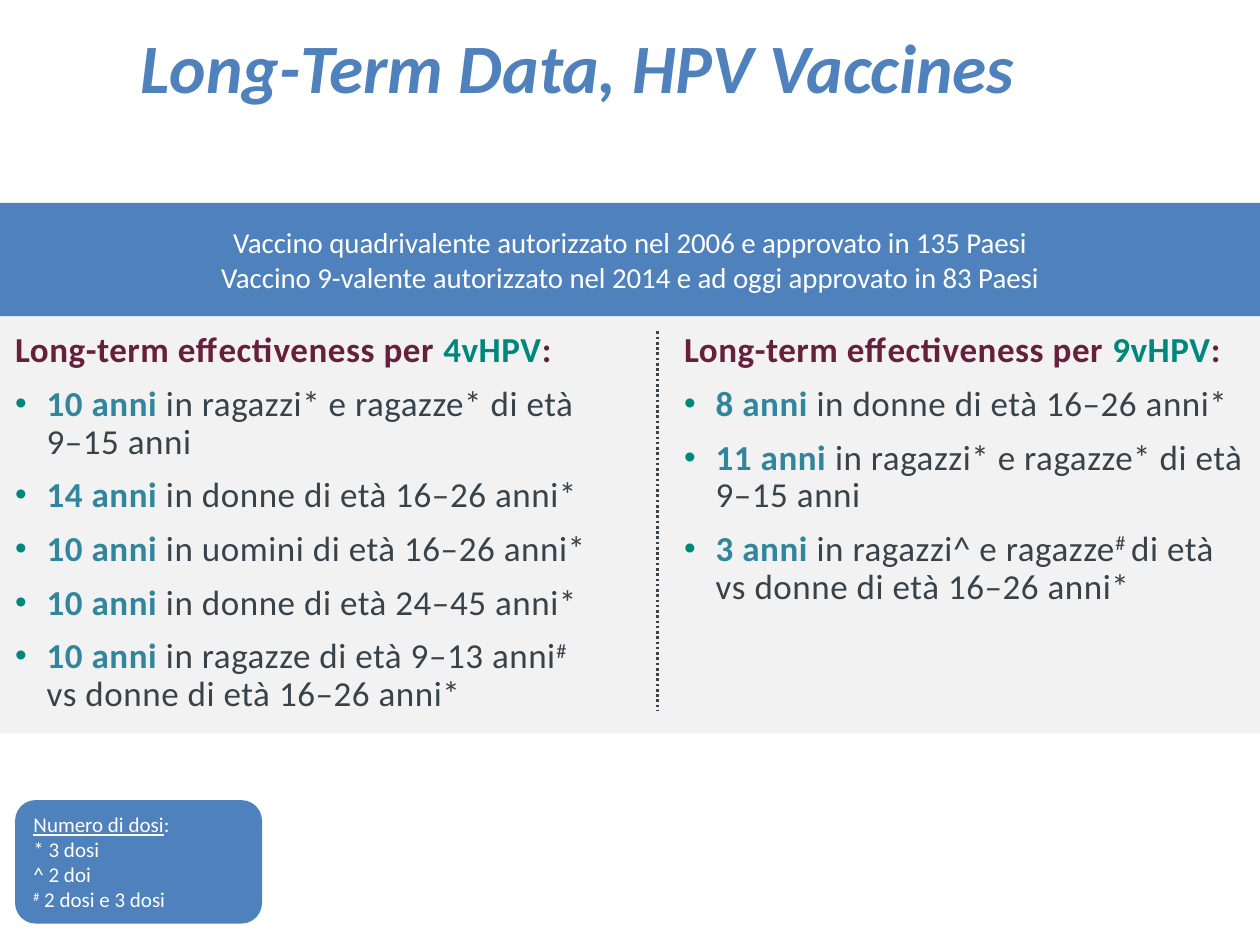
from lxml import etree
from pptx import Presentation
from pptx.dml.color import RGBColor
from pptx.enum.dml import MSO_LINE
from pptx.enum.shapes import MSO_CONNECTOR, MSO_SHAPE
from pptx.enum.text import MSO_ANCHOR, PP_ALIGN
from pptx.oxml.ns import qn
from pptx.util import Inches, Pt

COLORS = {
    "blue": "4F81BD", "panel": "F2F2F2", "plum": "66203A", "green": "00877C",
    "teal": "31859C", "slate": "37424A", "white": "FFFFFF",
}


def add_run(p, text, size, color, bold=False, spacing=0, raised=False):
    r = p.add_run()
    r.text = text
    r.font.name = "Calibri"
    r.font.size = Pt(size)
    r.font.bold = bold
    r.font.color.rgb = RGBColor.from_string(COLORS[color])
    rPr = r.font._element
    if spacing:
        rPr.set("spc", str(spacing))
    if raised:
        rPr.set("baseline", "30000")
    return r


def add_block(s, kind, box, color):
    sp = s.shapes.add_shape(kind, *[Inches(v) for v in box])
    sp.shadow.inherit = False
    sp.fill.solid()
    sp.fill.fore_color.rgb = RGBColor.from_string(COLORS[color])
    sp.line.fill.background()
    sp.text_frame.vertical_anchor = MSO_ANCHOR.MIDDLE
    return sp


prs = Presentation()
prs.slide_width, prs.slide_height = Inches(10), Inches(7.5)
s = prs.slides.add_slide(prs.slide_layouts[5])

# Title
title = s.shapes.title
title.left, title.top = Inches(0.51), Inches(0.24)
title.width, title.height = Inches(8.15), Inches(0.65)
title.text_frame.vertical_anchor = MSO_ANCHOR.MIDDLE
p = title.text_frame.paragraphs[0]
p.alignment = PP_ALIGN.CENTER
p.line_spacing = 0.9
add_run(p, "Long-Term Data, HPV Vaccines", 39.6, "blue", bold=True).font.italic = True

# Grey panel
panel = add_block(s, MSO_SHAPE.ROUNDED_RECTANGLE, (0, 2.47, 10, 3.35), "panel")
panel.adjustments[0] = 0

# Two columns: box, vaccine, bullets as (years, text, raised mark, rest)
columns = [
    ((0.12, 2.64, 4.65, 3.12), "4vHPV", [
        ("10 anni ", "in ragazzi* e ragazze* di età 9–15 anni", "", ""),
        ("14 anni ", "in donne di età 16–26 anni*", "", ""),
        ("10 anni ", "in uomini di età 16–26 anni*", "", ""),
        ("10 anni ", "in donne di età 24–45 anni*", "", ""),
        ("10 anni ", "in ragazze di età 9–13 anni", "#", " vs donne di età 16–26 anni*"),
    ]),
    ((5.43, 2.64, 4.45, 3), "9vHPV", [
        ("8 anni ", "in donne di età 16–26 anni*", "", ""),
        ("11 anni ", "in ragazzi* e ragazze* di età 9–15 anni", "", ""),
        ("3 anni ", "in ragazzi^ e ragazze", "# ", "di età vs donne di età 16–26 anni*"),
    ]),
]
for box, vaccine, bullets in columns:
    tf = s.shapes.add_textbox(*[Inches(v) for v in box]).text_frame
    tf.word_wrap = True
    tf.margin_left = tf.margin_right = tf.margin_top = tf.margin_bottom = 0
    p = tf.paragraphs[0]
    p.line_spacing, p.space_after = 0.9, Pt(4.5)
    for text, color in [("Long-term effectiveness per ", "plum"), (vaccine, "green"), (":", "plum")]:
        add_run(p, text, 20, color, bold=True, spacing=30)
    for years, text, mark, rest in bullets:
        p = tf.add_paragraph()
        p.line_spacing = 0.9
        p.space_before = p.space_after = Pt(4.5)
        pPr = p._p.get_or_add_pPr()
        pPr.set("marL", str(Inches(0.25)))
        pPr.set("indent", str(-Inches(0.25)))
        buClr = etree.SubElement(pPr, qn("a:buClr"))
        etree.SubElement(buClr, qn("a:srgbClr"), val=COLORS["green"])
        etree.SubElement(pPr, qn("a:buSzPct"), val="95000")
        etree.SubElement(pPr, qn("a:buFont"), typeface="Arial")
        etree.SubElement(pPr, qn("a:buChar"), char="•")
        add_run(p, years, 20, "teal", bold=True, spacing=30)
        add_run(p, text, 20, "slate", spacing=30)
        if mark:
            add_run(p, mark, 20, "slate", spacing=30, raised=True)
            add_run(p, rest, 20, "slate", spacing=30)

# Dotted divider
divider = s.shapes.add_connector(
    MSO_CONNECTOR.STRAIGHT, Inches(5.22), Inches(2.63), Inches(5.22), Inches(5.64))
divider.line.color.rgb = RGBColor.from_string(COLORS["slate"])
divider.line.width = Pt(1.5)
divider.line.dash_style = MSO_LINE.ROUND_DOT
etree.SubElement(divider._element.spPr, qn("a:effectLst"))

# Dose legend
legend = add_block(s, MSO_SHAPE.ROUNDED_RECTANGLE, (0.12, 6.35, 1.96, 0.98), "blue")
tf = legend.text_frame
lines = [("Numero di dosi", ":"), ("* 3 dosi", ""), ("^ 2 doi", ""), ("#", " 2 dosi e 3 dosi")]
for i, (lead, rest) in enumerate(lines):
    p = tf.paragraphs[0] if i == 0 else tf.add_paragraph()
    p.alignment = PP_ALIGN.LEFT
    r = add_run(p, lead, 12, "white", raised=lead == "#")
    r.font.underline = i == 0
    if rest:
        add_run(p, rest, 12, "white")

# Approval banner
banner = add_block(s, MSO_SHAPE.RECTANGLE, (0, 1.61, 10, 0.9), "blue")
tf = banner.text_frame
approvals = [
    "Vaccino quadrivalente autorizzato nel 2006 e approvato in 135 Paesi",
    "Vaccino 9-valente autorizzato nel 2014 e ad oggi approvato in 83 Paesi",
]
for i, text in enumerate(approvals):
    p = tf.paragraphs[0] if i == 0 else tf.add_paragraph()
    p.alignment = PP_ALIGN.CENTER
    add_run(p, text, 16.5, "white")

prs.save("out.pptx")
